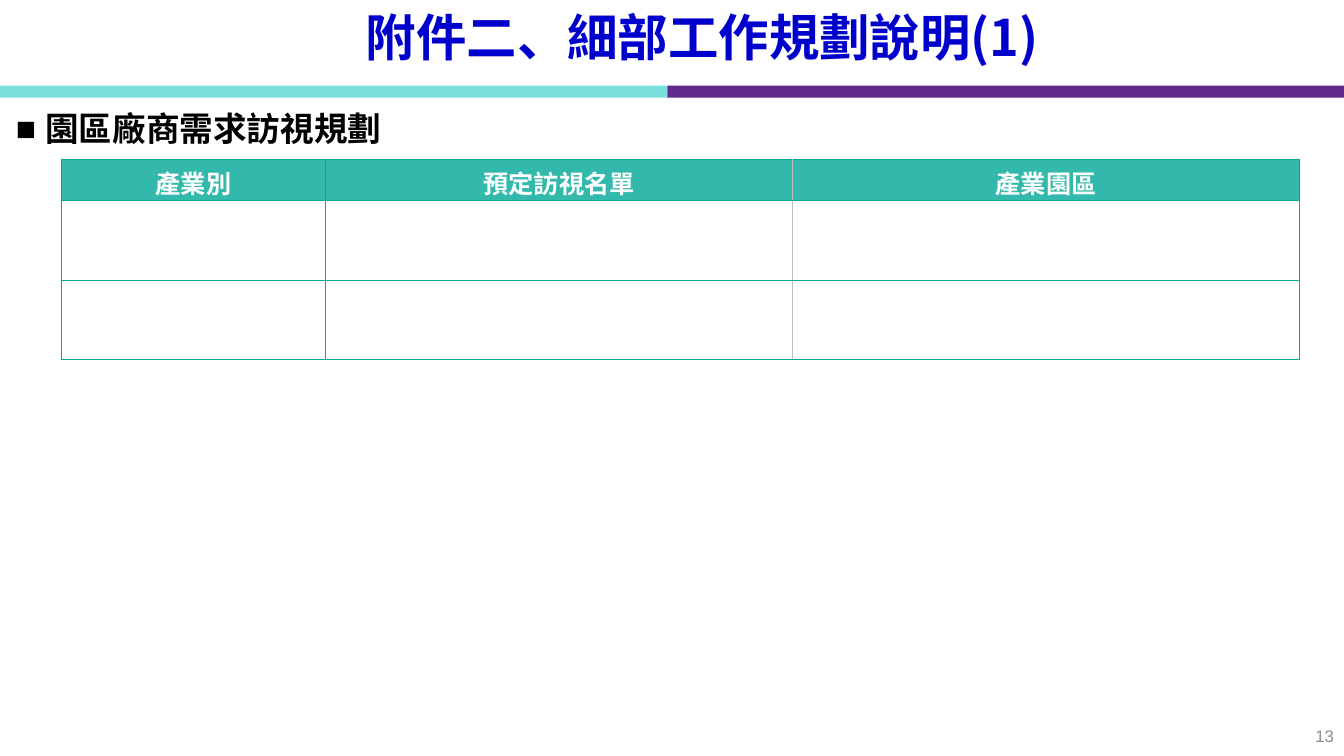
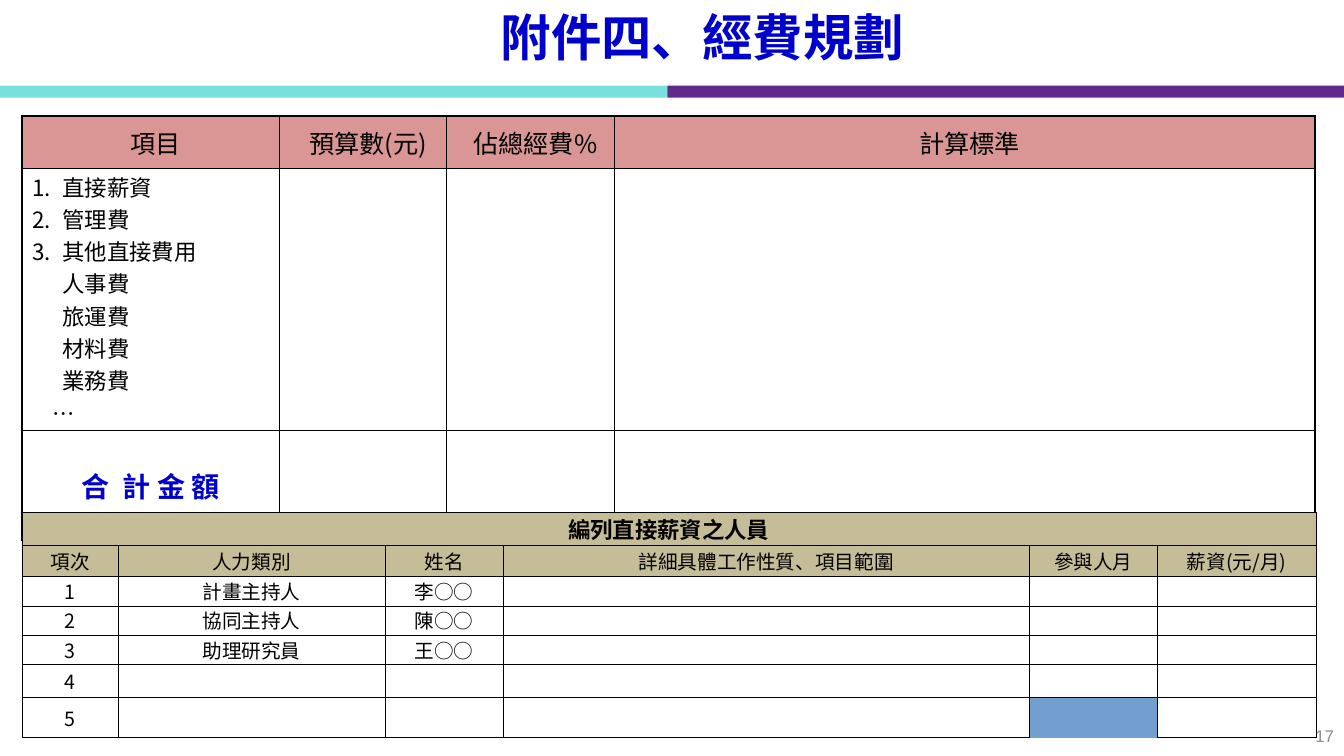
from lxml.etree import SubElement
from pptx import Presentation
from pptx.dml.color import RGBColor
from pptx.enum.shapes import MSO_SHAPE as SHAPE
from pptx.enum.text import MSO_ANCHOR as ANCHOR, PP_ALIGN as ALIGN
from pptx.oxml.ns import qn
from pptx.util import Inches, Pt

COLOURS = {
    "aqua": "7AE0DE", "purple": "612A8A", "title": "0000CC", "teal": "00A896",
    "divider": "BFBFBF", "rose": "D99694", "khaki": "C4BD97", "blue": "729FCF",
    "black": "000000", "white": "FFFFFF", "number": "8C8C8C",
}
CJK = "Noto Sans CJK SC"


def write(paragraph, text, size, colour="black", bold=False, align=ALIGN.CENTER,
          face=CJK, left=0, indent=0, bullet=None):
    paragraph.alignment = align
    properties = paragraph._p.get_or_add_pPr()
    properties.set("marL", str(Inches(left)))
    properties.set("indent", str(Inches(indent)))
    if bullet == "1.":
        SubElement(properties, qn("a:buAutoNum"), type="arabicPeriod")
    elif bullet:
        SubElement(properties, qn("a:buFont"), typeface="Arial")
        SubElement(properties, qn("a:buChar"), char=bullet)
    if not text:
        SubElement(paragraph._p, qn("a:endParaRPr"), sz=str(size * 100))
        return
    run = paragraph.add_run()
    run.text = text
    for key, value in {"size": Pt(size), "bold": bold, "name": face}.items():
        setattr(run.font, key, value)
    run.font.color.rgb = RGBColor.from_string(COLOURS[colour])
    SubElement(run._r.get_or_add_rPr(), qn("a:ea"), typeface=face)


def style_cell(cell, margins, borders, fill=None, opacity=100):
    cell.vertical_anchor = ANCHOR.MIDDLE
    for side, margin in zip(("left", "top", "right", "bottom"), margins):
        setattr(cell, f"margin_{side}", Inches(margin))
    properties = cell._tc.get_or_add_tcPr()
    for side in "LRTB":
        colour, width = borders[side]
        line = SubElement(properties, qn(f"a:ln{side}"), w=str(Pt(width)))
        paint = SubElement(line, qn("a:solidFill"))
        SubElement(paint, qn("a:srgbClr"), val=COLOURS[colour])
    if not fill:
        cell.fill.background()
        return
    cell.fill.solid()
    cell.fill.fore_color.rgb = RGBColor.from_string(COLOURS[fill])
    if opacity < 100:
        shade = properties.find(qn("a:solidFill"))[0]
        SubElement(shade, qn("a:alpha"), val=str(opacity * 1000))


deck = Presentation()
deck.slide_width, deck.slide_height = Inches(13.33), Inches(7.5)

pages = [
    {"title": "附件二、細部工作規劃說明(1)", "number": "13", "tables": [
        (0.61, 1.58, [2.62, 4.63, 5.03], [0.41, 0.79, 0.79])]},
    {"title": "附件四、經費規劃", "number": "17", "tables": [
        (0.22, 1.15, [2.55, 1.66, 1.66, 6.95], [0.52, 2.6, 1.09]),
        (0.22, 5.08, [0.95, 2.65, 1.17, 2.85, 2.37, 1.27, 1.57],
         [0.33, 0.31, 0.29, 0.29, 0.29, 0.33, 0.38])]},
]
slides, tables = [], []
for page in pages:
    slide = deck.slides.add_slide(deck.slide_layouts[6])
    slides.append(slide)
    for left, width, colour in ((0, 6.62, "aqua"), (6.62, 6.74, "purple")):
        band = slide.shapes.add_shape(SHAPE.RECTANGLE, Inches(left), Inches(0.85),
                                      Inches(width), Inches(0.12))
        band.shadow.inherit = False
        band.fill.solid()
        band.fill.fore_color.rgb = RGBColor.from_string(COLOURS[colour])
        band.line.fill.background()

    title = slide.shapes.add_textbox(Inches(1.67), Inches(0.08), Inches(10), Inches(0.68)).text_frame
    title.word_wrap = True
    title.paragraphs[0].line_spacing = 0.9
    write(title.paragraphs[0], page["title"], 36, "title", True, left=0.59)

    for left, top, widths, heights in page["tables"]:
        table = slide.shapes.add_table(len(heights), len(widths), Inches(left), Inches(top),
                                       Inches(sum(widths)), Inches(sum(heights))).table
        table.first_row = table.horz_banding = False
        for column, width in zip(table.columns, widths):
            column.width = Inches(width)
        for row, height in zip(table.rows, heights):
            row.height = Inches(height)
        tables.append(table)

    number = slide.shapes.add_textbox(Inches(11), Inches(7.1), Inches(2.33), Inches(0.4)).text_frame
    number.word_wrap = True
    number.vertical_anchor = ANCHOR.MIDDLE
    write(number.paragraphs[0], page["number"], 12, "number", align=ALIGN.RIGHT, face="Arial")

visits, budget, staff = tables

heading = slides[0].shapes.add_textbox(Inches(0.06), Inches(1.07), Inches(10.77), Inches(0.5)).text_frame
heading.word_wrap = True
heading.paragraphs[0].line_spacing = 0.9
write(heading.paragraphs[0], "園區廠商需求訪視規劃", 24, bold=True, align=ALIGN.LEFT,
      left=0.29, indent=-0.29, bullet="■")

visit_headers = ["產業別", "預定訪視名單", "產業園區"]
for r in range(3):
    for c, header in enumerate(visit_headers):
        cell = visits.cell(r, c)
        borders = dict.fromkeys("LRTB", ("teal", 1))
        if c == 1:
            borders["R"] = ("divider", 1)
        if c == 2:
            borders["L"] = ("divider", 1)
        style_cell(cell, (0.1, 0.05, 0.1, 0), borders, None if r else "teal", 80)
        write(cell.text_frame.paragraphs[0], "" if r else header, 18, "white", True)

budget_headers = ["項目", "預算數(元)", "佔總經費%", "計算標準"]
budget_fills = ["rose", None, "white"]
for r, fill in enumerate(budget_fills):
    for c, header in enumerate(budget_headers):
        cell = budget.cell(r, c)
        outer = {"L": c == 0, "R": c == 3, "T": r == 0, "B": r == 2}
        borders = {side: ("black", 1.5 if edge else 0.5) for side, edge in outer.items()}
        inset = 0.02 if c else 0.1
        style_cell(cell, (inset, 0.02, inset, 0.02), borders, fill)
        if r == 0:
            write(cell.text_frame.paragraphs[0], header, 18, indent=0.1)

expenses = [("直接薪資", "1."), ("管理費", "1."), ("其他直接費用", "1."), ("人事費", None),
            ("旅運費", None), ("材料費", None), ("業務費", None), ("…", None)]
items = budget.cell(1, 0).text_frame
for i, (expense, bullet) in enumerate(expenses):
    paragraph = items.add_paragraph() if i else items.paragraphs[0]
    write(paragraph, expense, 16, align=ALIGN.LEFT, left=0.2 if expense == "…" else 0.3,
          indent=-0.3 if bullet else 0, bullet=bullet)
write(budget.cell(2, 0).text_frame.paragraphs[0], "合  計 金 額", 20, "title", True)

staff_rows = [
    ["編列直接薪資之人員"],
    ["項次", "人力類別", "姓名", "詳細具體工作性質、項目範圍", "", "參與人月", "薪資(元/月)"],
    ["1", "計畫主持人", "李○○"],
    ["2", "協同主持人", "陳○○"],
    ["3", "助理研究員", "王○○"],
    ["4"],
    ["5"],
]
for r, texts in enumerate(staff_rows):
    for c in range(7):
        cell = staff.cell(r, c)
        fill = "khaki" if r < 2 else "blue" if (r, c) == (6, 5) else None
        style_cell(cell, (0.01, 0, 0.01, 0), dict.fromkeys("LRTB", ("black", 0.25)), fill)
        write(cell.text_frame.paragraphs[0], texts[c] if c < len(texts) else "",
              14 if r else 16, bold=r == 0)
    first, last = (3, 4) if r else (0, 6)
    staff.cell(r, first).merge(staff.cell(r, last))

deck.save("out.pptx")
